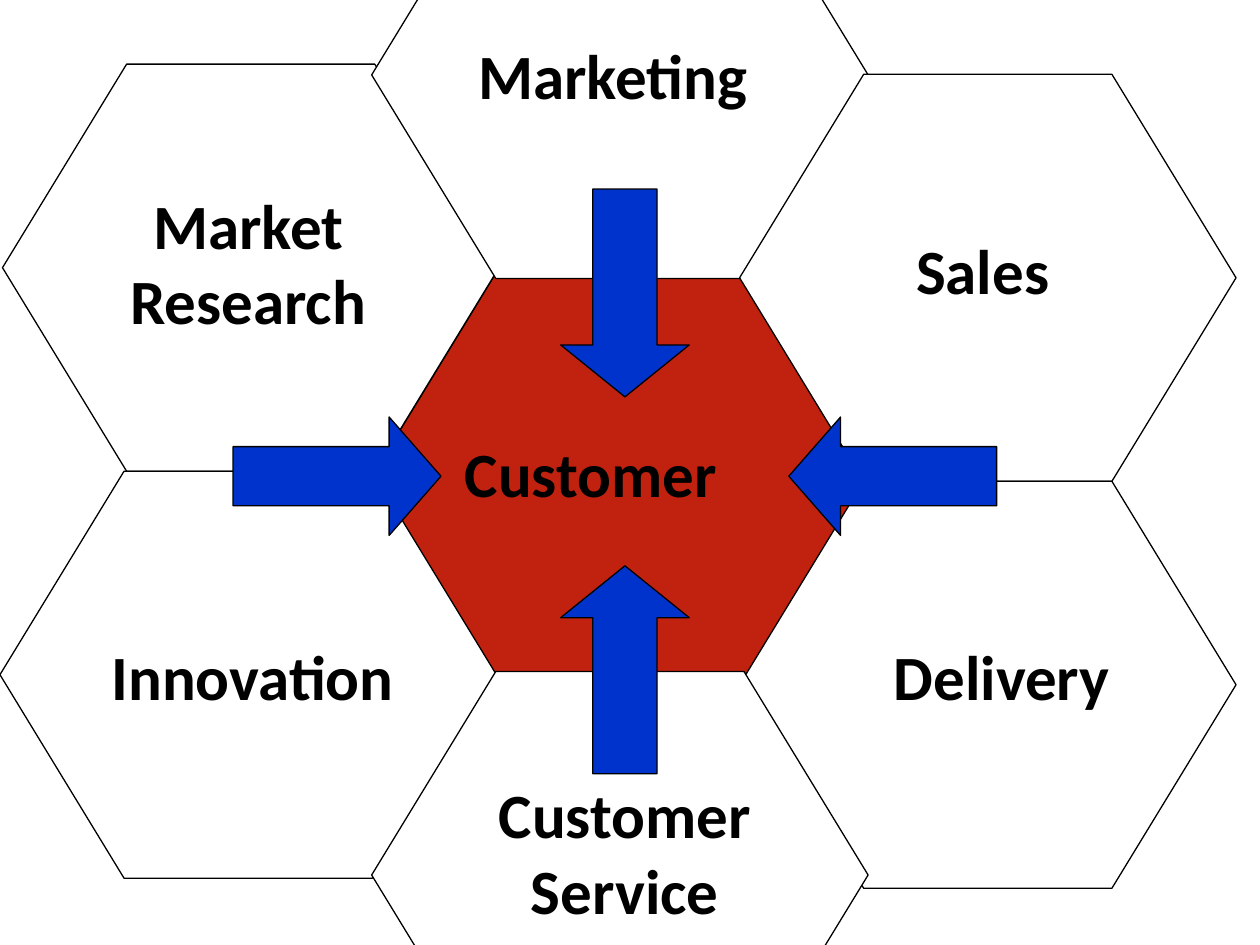
import pptx
import pptx.util
import pptx.dml.color
import pptx.enum.shapes
import pptx.enum.text
from dataclasses import dataclass

SCALE = 9144  # EMU per px, 100 px to the inch


@dataclass
class Theme:
    font: str = "Calibri"
    label_size: int = 36
    line_width: float = 0.75
    ink: str = "000000"
    center: str = "C1220F"
    cell: str = "FFFFFF"
    arrow: str = "0033CC"


theme = Theme()
rgb = pptx.dml.color.RGBColor.from_string
MSO = pptx.enum.shapes.MSO_SHAPE
ALIGN = pptx.enum.text.PP_ALIGN

prs = pptx.Presentation()
prs.slide_width, prs.slide_height = 1000 * SCALE, 750 * SCALE
s = prs.slides.add_slide(prs.slide_layouts[6])


def add_outlined(kind, box, fill, adjustments):
    sp = s.shapes.add_shape(kind, *(v * SCALE for v in box))
    sp.shadow.inherit = False
    sp.fill.solid()
    sp.fill.fore_color.rgb = rgb(fill)
    sp.line.color.rgb = rgb(theme.ink)
    sp.line.width = pptx.util.Pt(theme.line_width)
    for i, value in enumerate(adjustments):
        sp.adjustments[i] = value


def add_label(text, box, align):
    sp = s.shapes.add_textbox(*(v * SCALE for v in box))
    tf = sp.text_frame
    tf.word_wrap = True
    tf.auto_size = pptx.enum.text.MSO_AUTO_SIZE.SHAPE_TO_FIT_TEXT
    tf.text = text
    p = tf.paragraphs[0]
    p.alignment = align
    font = p.runs[0].font
    font.name = theme.font
    font.size = pptx.util.Pt(theme.label_size)
    font.bold = True
    font.color.rgb = rgb(theme.ink)


# Honeycomb: hexagon corner, fill, label, label box, alignment
HEX_W, HEX_H = 394, 323
cells = [
    (295, 217, theme.center, "Customer", (359, 340, 276, 70), ALIGN.LEFT),
    (2, 51, theme.cell, "Market Research", (59, 143, 276, 130), ALIGN.CENTER),
    (0, 374, theme.cell, "Innovation", (43, 501, 315, 70), ALIGN.CENTER),
    (295, -102, theme.cell, "Marketing", (341, 24, 291, 131), ALIGN.CENTER),
    (587, 59, theme.cell, "Sales", (642, 179, 276, 70), ALIGN.CENTER),
    (587, 382, theme.cell, "Delivery", (657, 501, 276, 70), ALIGN.CENTER),
    (295, 533, theme.cell, "Customer Service", (358, 611, 276, 130), ALIGN.CENTER),
]
for x, y, fill, text, label_box, align in cells:
    add_outlined(MSO.HEXAGON, (x, y, HEX_W, HEX_H), fill, [0.305, 1.155])
    add_label(text, label_box, align)

# Arrows pointing at the customer
LENGTH, SIDE_W, UPRIGHT_W = 165, 94, 102
for kind, x in ((MSO.RIGHT_ARROW, 185), (MSO.LEFT_ARROW, 626)):
    add_outlined(kind, (x, 331, LENGTH, SIDE_W), theme.arrow, [0.5, 0.438])
for kind, y in ((MSO.DOWN_ARROW, 150), (MSO.UP_ARROW, 449)):
    add_outlined(kind, (445, y, UPRIGHT_W, LENGTH), theme.arrow, [0.5, 0.404])

prs.save("out.pptx")
